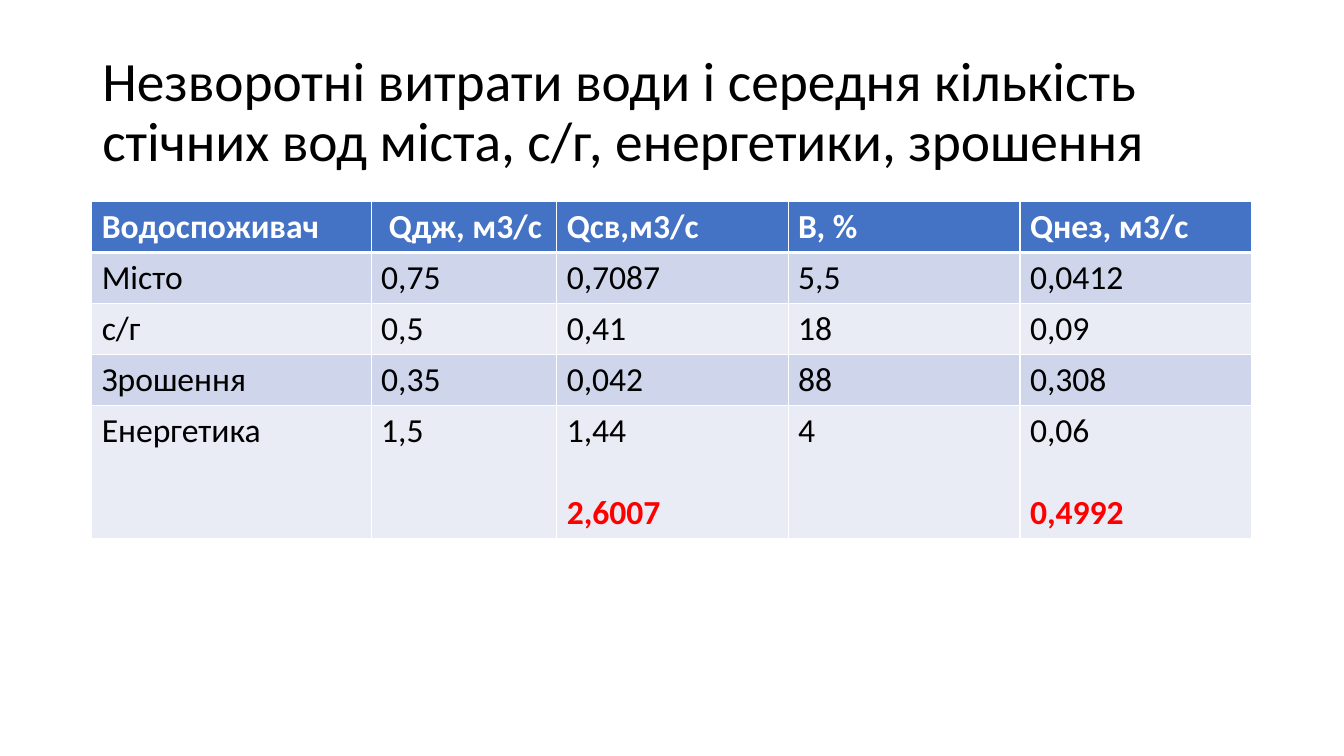
from dataclasses import dataclass

from lxml import etree
from pptx import Presentation
from pptx.dml.color import RGBColor
from pptx.enum.text import MSO_ANCHOR
from pptx.oxml.ns import qn
from pptx.util import Pt

MIDDLE = MSO_ANCHOR.MIDDLE

TITLE = "Незворотні витрати води і середня кількість стічних вод міста, с/г, енергетики, зрошення"
HEADER = ["Водоспоживач", " Qдж, м3/с", "Qсв,м3/с", "B, %", "Qнез, м3/с"]
CONSUMERS = [
    ["Місто", "0,75", "0,7087", "5,5", "0,0412"],
    ["с/г", "0,5", "0,41", "18", "0,09"],
    ["Зрошення", "0,35", "0,042", "88", "0,308"],
    ["Енергетика", "1,5", "1,44", "4", "0,06"],
]
TOTALS = {2: "2,6007", 4: "0,4992"}  # by column, shown in the last row

TITLE_BOX = (66, 28.75, 828, 104.4)
TABLE_LEFT, TABLE_TOP = 65.5, 144
COLUMN_WIDTHS = [199.6, 132.6, 165.3, 165.6, 165.6]
ROW_HEIGHT, LAST_ROW_HEIGHT = 36.4, 95


@dataclass(frozen=True)
class Theme:
    font: str = "Calibri"
    title_size: float = 39.6
    cell_size: float = 24
    text: str = "000000"
    white: str = "FFFFFF"
    total: str = "FF0000"
    header_fill: str = "4472C4"
    band_fills: tuple = ("CFD5EA", "E9EBF5")
    border: float = 1
    header_rule: float = 3
    total_gap: float = 29.3


THEME = Theme()


def add_run(p, text, size, color, bold=False):
    r = p.add_run()
    r.text = text
    r.font.name = THEME.font
    r.font.size = Pt(size)
    r.font.bold = bold
    r.font.color.rgb = RGBColor.from_string(color)


def set_borders(cell, top, bottom):
    """Draw white cell borders; they must precede the fill in tcPr."""
    tc_pr = cell._tc.get_or_add_tcPr()
    widths = {"a:lnL": THEME.border, "a:lnR": THEME.border, "a:lnT": top, "a:lnB": bottom}
    for i, (tag, width) in enumerate(widths.items()):
        ln = etree.Element(qn(tag), w=str(Pt(width)))
        fill = etree.SubElement(ln, qn("a:solidFill"))
        etree.SubElement(fill, qn("a:srgbClr"), val=THEME.white)
        tc_pr.insert(i, ln)


def add_title(slide):
    tf = slide.shapes.add_textbox(*map(Pt, TITLE_BOX)).text_frame
    tf.word_wrap = True
    tf.vertical_anchor = MIDDLE
    p = tf.paragraphs[0]
    p.line_spacing = 0.9
    add_run(p, TITLE, THEME.title_size, THEME.text)


def add_water_table(slide):
    rows = [HEADER] + CONSUMERS
    heights = [ROW_HEIGHT] * (len(rows) - 1) + [LAST_ROW_HEIGHT]
    table = slide.shapes.add_table(
        len(rows), len(HEADER), Pt(TABLE_LEFT), Pt(TABLE_TOP),
        Pt(sum(COLUMN_WIDTHS)), Pt(sum(heights))).table
    table.horz_banding = False
    for column, width in zip(table.columns, COLUMN_WIDTHS):
        column.width = Pt(width)

    for i, (values, height) in enumerate(zip(rows, heights)):
        table.rows[i].height = Pt(height)
        is_header = i == 0
        fill = THEME.header_fill if is_header else THEME.band_fills[(i - 1) % 2]
        color = THEME.white if is_header else THEME.text
        top = THEME.header_rule if i == 1 else THEME.border
        bottom = THEME.header_rule if is_header else THEME.border
        for j, value in enumerate(values):
            cell = table.cell(i, j)
            cell.fill.solid()
            cell.fill.fore_color.rgb = RGBColor.from_string(fill)
            set_borders(cell, top, bottom)
            add_run(cell.text_frame.paragraphs[0], value, THEME.cell_size, color, is_header)

    for j, total in TOTALS.items():
        p = table.cell(len(rows) - 1, j).text_frame.add_paragraph()
        p.space_before = Pt(THEME.total_gap)
        add_run(p, total, THEME.cell_size, THEME.total, True)


def main():
    prs = Presentation()
    prs.slide_width, prs.slide_height = Pt(960), Pt(540)
    slide = prs.slides.add_slide(prs.slide_layouts[6])
    add_title(slide)
    add_water_table(slide)
    prs.save("out.pptx")


if __name__ == "__main__":
    main()
